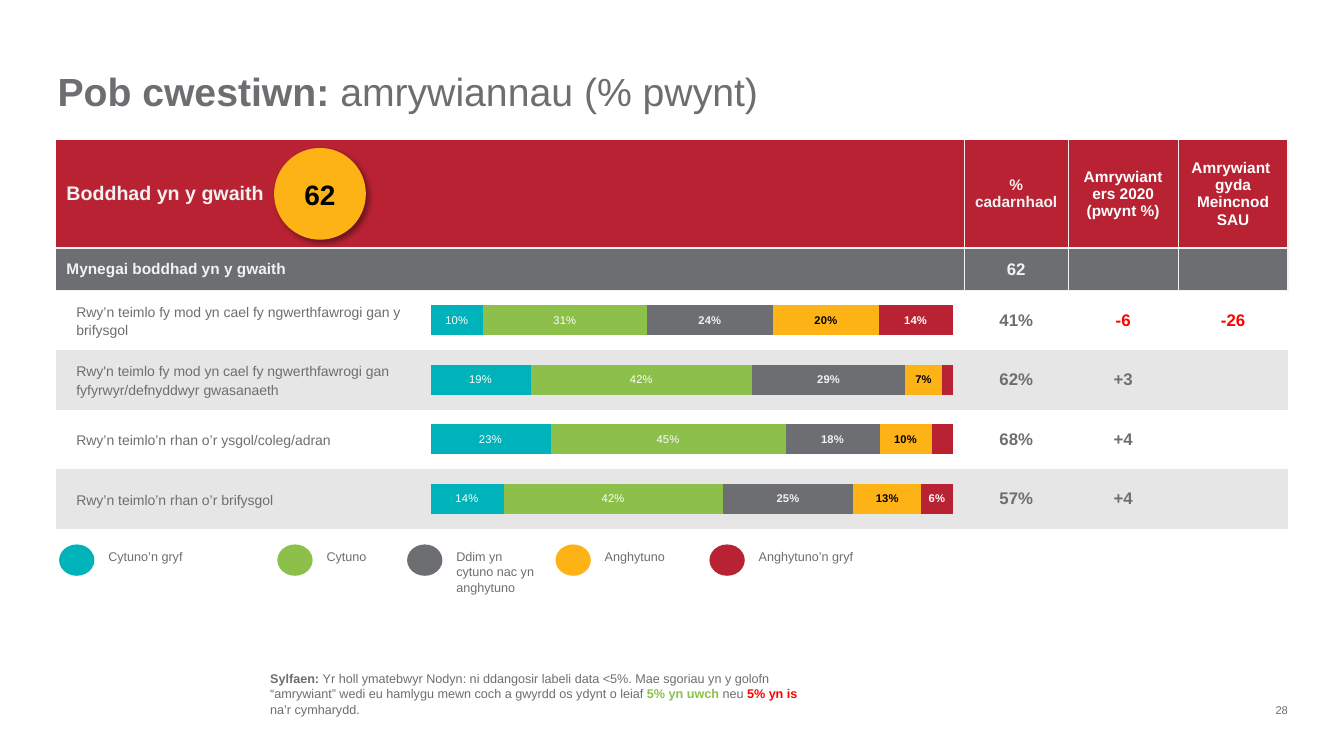
from lxml import etree
from pptx import Presentation
from pptx.chart.data import CategoryChartData
from pptx.dml.color import RGBColor
from pptx.enum.chart import XL_CHART_TYPE, XL_LABEL_POSITION
from pptx.enum.shapes import MSO_SHAPE
from pptx.enum.text import MSO_ANCHOR, MSO_AUTO_SIZE, PP_ALIGN
from pptx.oxml import parse_xml
from pptx.oxml.ns import nsdecls, qn
from pptx.util import Cm, Pt

BAR = XL_CHART_TYPE.BAR_STACKED_100
LABEL_CENTER = XL_LABEL_POSITION.CENTER
OVAL = MSO_SHAPE.OVAL
TOP, MIDDLE, BOTTOM = MSO_ANCHOR.TOP, MSO_ANCHOR.MIDDLE, MSO_ANCHOR.BOTTOM
NO_FIT = MSO_AUTO_SIZE.NONE
LEFT, CENTER, RIGHT = PP_ALIGN.LEFT, PP_ALIGN.CENTER, PP_ALIGN.RIGHT

FONT = "Arial"
GREY, PALE, BAND = "6D6E71", "F2F2F2", "E6E6E6"
TEAL, GREEN, AMBER, CRIMSON = "00B3BA", "8CC04B", "FDB315", "B82233"
RED, WHITE, BLACK = "FF0000", "FFFFFF", "000000"
NO_STYLE = "{2D5ABB26-0587-4C30-8999-92F81FD0307C}"

# Table geometry in cm
COLS = [22.88, 2.62, 2.77, 2.77]
HEAD_H, INDEX_H, ROW_H = 2.72, 1.07, 1.5

HEADERS = [("Boddhad yn y gwaith", 14, PALE), ("% cadarnhaol", 11, PALE),
           ("Amrywiant ers 2020 (pwynt %)", 11, WHITE),
           ("Amrywiant \vgyda Meincnod SAU", 11, WHITE)]
INDEX = [("Mynegai boddhad yn y gwaith", 11, PALE), ("62", 12, PALE),
         ("", 11, PALE), ("", 11, PALE)]
QUESTIONS = [
    ("Rwy’n teimlo fy mod yn cael fy ngwerthfawrogi gan y\nbrifysgol", "41%", "-6", "-26"),
    ("Rwy'n teimlo fy mod yn cael fy ngwerthfawrogi gan\n"
     "fyfyrwyr/defnyddwyr gwasanaeth", "62%", "+3", ""),
    ("Rwy’n teimlo’n rhan o’r ysgol/coleg/adran", "68%", "+4", ""),
    ("Rwy’n teimlo’n rhan o’r brifysgol", "57%", "+4", ""),
]
# Bar colour, label colour, bold label, values
SERIES = [
    (TEAL, WHITE, False, (0.10, 0.19, 0.23, 0.14)),
    (GREEN, WHITE, False, (0.31, 0.42, 0.45, 0.42)),
    (GREY, PALE, True, (0.24, 0.29, 0.18, 0.25)),
    (AMBER, BLACK, True, (0.20, 0.07, 0.10, 0.13)),
    (CRIMSON, WHITE, True, (0.14, 0.02, 0.04, 0.06)),
]
# Left offset, label width, colour, label
LEGEND = [
    (0, 3.66, TEAL, "Cytuno’n gryf"),
    (5.5, 1.6, GREEN, "Cytuno"),
    (8.77, 2.05, GREY, "Ddim yn cytuno nac yn anghytuno"),
    (12.51, 2.26, AMBER, "Anghytuno"),
    (16.39, 4.34, CRIMSON, "Anghytuno’n gryf"),
]


def rgb(color):
    return RGBColor.from_string(color)


def style_font(font, size, color, bold=False):
    font.name, font.size, font.bold = FONT, Pt(size), bold
    font.color.rgb = rgb(color)


def write(tf, runs, size, align=LEFT, anchor=TOP):
    """Fill a frame with one paragraph of (text, colour, bold) runs."""
    tf.word_wrap, tf.auto_size, tf.vertical_anchor = True, NO_FIT, anchor
    tf.margin_left = tf.margin_right = tf.margin_top = tf.margin_bottom = 0
    p = tf.paragraphs[0]
    p.alignment = align
    for text, color, bold in runs:
        r = p.add_run()
        r.text = text
        style_font(r.font, size, color, bold)


def add_text(s, x, y, w, h, runs, size, align=LEFT, anchor=TOP):
    box = s.shapes.add_textbox(Cm(x), Cm(y), Cm(w), Cm(h))
    write(box.text_frame, runs, size, align, anchor)


def add_circle(s, x, y, w, h, color):
    sp = s.shapes.add_shape(OVAL, Cm(x), Cm(y), Cm(w), Cm(h))
    sp.shadow.inherit = False
    sp.fill.solid()
    sp.fill.fore_color.rgb = rgb(color)
    sp.line.fill.background()
    return sp


def add_title(s, x, y, w, h):
    sp = s.shapes.title
    sp.left, sp.top, sp.width, sp.height = Cm(x), Cm(y), Cm(w), Cm(h)
    write(sp.text_frame, [("Pob cwestiwn: ", GREY, True),
                          ("amrywiannau (% pwynt)", GREY, False)], 28)


def set_cell(cell, text, size, color, bold, align, fill, edges=""):
    tcPr = cell._tc.get_or_add_tcPr()
    for edge in edges:
        tcPr.append(parse_xml(
            f'<a:ln{edge} {nsdecls("a")} w="12700"><a:solidFill>'
            f'<a:srgbClr val="{PALE}"/></a:solidFill></a:ln{edge}>'))
    if fill:
        cell.fill.solid()
        cell.fill.fore_color.rgb = rgb(fill)
    else:
        cell.fill.background()
    cell.vertical_anchor = MIDDLE
    if align == CENTER:
        cell.margin_left = cell.margin_right = Cm(0.2)
    cell.text_frame.text = text
    for p in cell.text_frame.paragraphs:
        p.alignment = align
        style_font(p.font, size, color, bold)
        for r in p.runs:
            style_font(r.font, size, color, bold)


def add_results_table(s, x, y):
    heights = [HEAD_H, INDEX_H] + [ROW_H] * len(QUESTIONS)
    table = s.shapes.add_table(len(heights), len(COLS), Cm(x), Cm(y),
                               Cm(sum(COLS)), Cm(sum(heights))).table
    table.first_row = table.horz_banding = False
    table._tbl.tblPr.find(qn("a:tableStyleId")).text = NO_STYLE
    for col, width in zip(table.columns, COLS):
        col.width = Cm(width)
    for row, height in zip(table.rows, heights):
        row.height = Cm(height)
    # Heading and index rows
    for i, (cells, fill, edges) in enumerate([(HEADERS, CRIMSON, "RB"), (INDEX, GREY, "RT")]):
        for j, (text, size, color) in enumerate(cells):
            set_cell(table.cell(i, j), text, size, color, True,
                     CENTER if j else LEFT, fill, "L" + edges if j else edges)
    # Question rows
    for i, (question, *figures) in enumerate(QUESTIONS):
        fill = BAND if i % 2 else None
        cell = table.cell(i + 2, 0)
        set_cell(cell, question, 10, GREY, False, LEFT, fill)
        for p in cell.text_frame.paragraphs:
            p.line_spacing = 1.2
            p._p.get_or_add_pPr().set("marL", str(Cm(0.25)))
        for j, figure in enumerate(figures, 1):
            color = RED if figure.startswith("-") else GREY
            set_cell(table.cell(i + 2, j), figure, 12, color, True, CENTER, fill)


def add_answer_chart(s, x, y, w, h):
    data = CategoryChartData(number_format="0%")
    data.categories = [str(n + 1) for n in range(len(QUESTIONS))]
    for n, (*_, values) in enumerate(SERIES, 1):
        data.add_series(f"Series {n}", values)
    chart = s.shapes.add_chart(BAR, Cm(x), Cm(y), Cm(w), Cm(h), data).chart
    chart.has_legend = chart.has_title = False
    style_font(chart.font, 8, WHITE)
    axis = chart.value_axis
    axis.minimum_scale, axis.maximum_scale = 0, 1
    axis.has_major_gridlines = axis.visible = False
    chart.category_axis.reverse_order = True
    chart.category_axis.visible = False
    plot = chart.plots[0]
    plot.gap_width, plot.overlap, plot.vary_by_categories = 100, 100, False
    for ser, (color, label_color, bold, values) in zip(plot.series, SERIES):
        ser.format.fill.solid()
        ser.format.fill.fore_color.rgb = rgb(color)
        # Values under 5% carry no label
        all_shown = min(values) >= 0.05
        labels = ser.data_labels
        labels.show_value = all_shown
        labels.number_format, labels.number_format_is_linked = "0%", False
        labels.position = LABEL_CENTER
        style_font(labels.font, 8, label_color, bold)
        for i, value in enumerate(values):
            if not all_shown and value >= 0.05:
                label = ser.points[i].data_label
                style_font(label.font, 8, label_color, bold)
                label.position = LABEL_CENTER
    # Plot area fills the whole frame
    area = chart._chartSpace.chart.plotArea
    for old in area.findall(qn("c:layout")):
        area.remove(old)
    layout = etree.Element(qn("c:layout"))
    manual = etree.SubElement(layout, qn("c:manualLayout"))
    for tag, val in [("layoutTarget", "inner"), ("xMode", "edge"), ("yMode", "edge"),
                     ("x", "0"), ("y", "0"), ("w", "1"), ("h", "1")]:
        etree.SubElement(manual, qn(f"c:{tag}")).set("val", val)
    area.insert(0, layout)


def add_score(s, x, y, size):
    sp = add_circle(s, x, y, size, size, AMBER)
    write(sp.text_frame, [("62", BLACK, True)], 20, CENTER, MIDDLE)
    sp._element.spPr.find(qn("a:effectLst")).append(parse_xml(
        f'<a:outerShdw {nsdecls("a")} blurRad="50800" dist="38100" dir="2700000">'
        f'<a:srgbClr val="{BLACK}"><a:alpha val="40000"/></a:srgbClr></a:outerShdw>'))


def add_legend(s, x, y):
    for dx, width, color, label in LEGEND:
        add_circle(s, x + dx, y, 0.89, 0.79, color)
        add_text(s, x + dx + 1.24, y + 0.12, width, 1.2, [(label, GREY, False)], 9)


def add_footer(s, x, y, w, h):
    note = [("Sylfaen: ", GREY, True),
            ("Yr holl ymatebwyr Nodyn: ni ddangosir labeli data <5%. Mae sgoriau yn y golofn "
             "“amrywiant” wedi eu hamlygu mewn coch a gwyrdd os ydynt o leiaf ", GREY, False),
            ("5% yn uwch ", GREEN, True), ("neu ", GREY, False),
            ("5% yn is ", RED, True), ("na’r cymharydd.", GREY, False)]
    add_text(s, x + 5.39, y, 13.51, h, note, 9, anchor=BOTTOM)
    add_text(s, x + w - 1, y + h - 0.4, 1, 0.4, [("28", GREY, False)], 8, RIGHT, BOTTOM)


def main():
    prs = Presentation()
    prs.slide_width, prs.slide_height = Cm(33.87), Cm(19.05)
    s = prs.slides.add_slide(prs.slide_layouts[5])
    left, top = 1.42, 3.53
    body_top = top + HEAD_H + INDEX_H
    add_title(s, 1.45, 1.7, 28.2, 1.2)
    add_results_table(s, left, top)
    add_answer_chart(s, left + 9.43, body_top, 13.16, ROW_H * len(QUESTIONS))
    add_score(s, left + 5.49, top + 0.2, 2.31)
    add_legend(s, 1.49, 13.72)
    add_footer(s, left, 16.96, sum(COLS), 1.1)
    prs.save("out.pptx")


if __name__ == "__main__":
    main()
